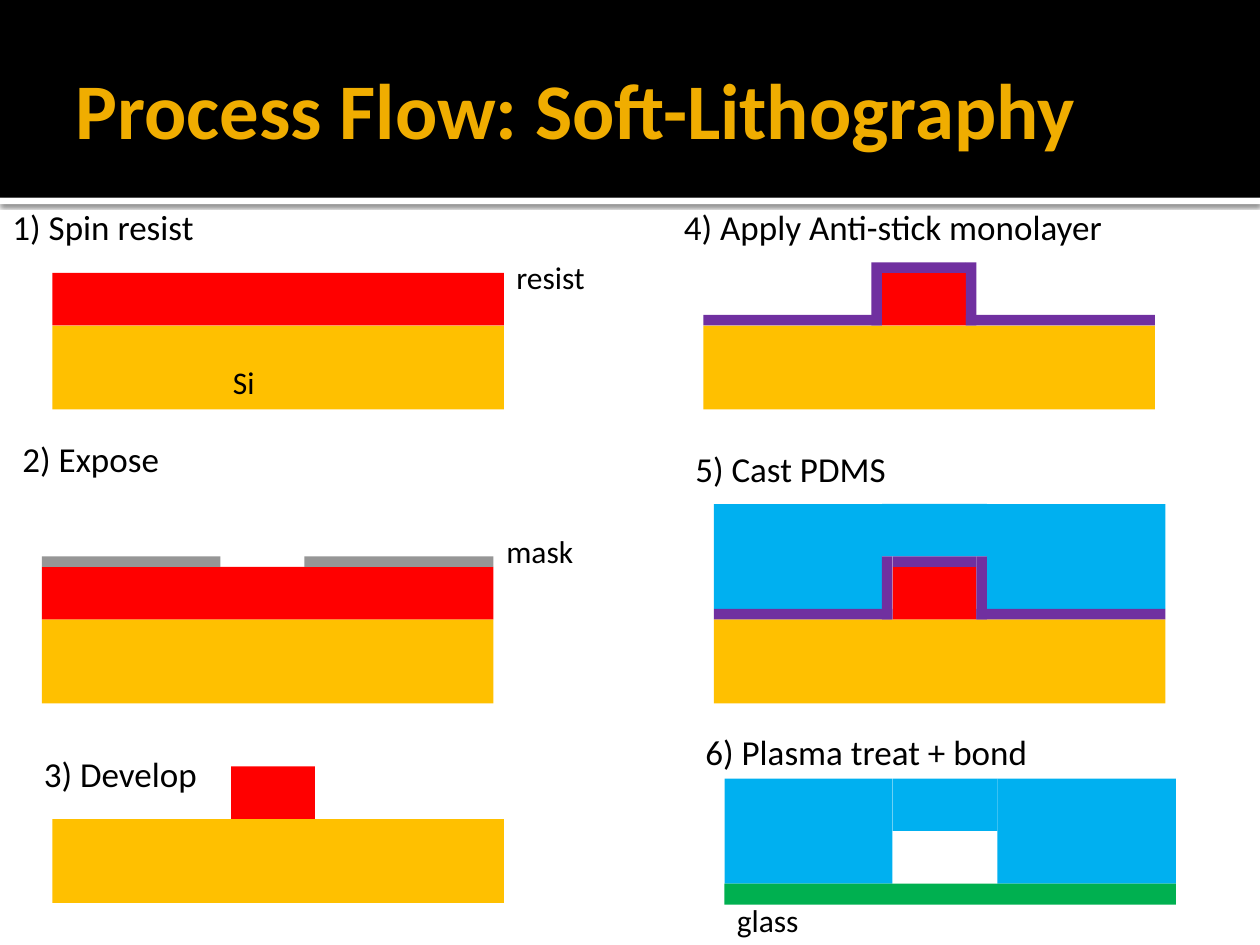
import pptx
import pptx.dml.color
import pptx.enum.shapes
import pptx.enum.text
import pptx.util
import lxml.etree
from pptx.util import Inches

THEME = {
    "font": "Calibri",
    "title_size": 45, "step_size": 20, "material_size": 18,
    "title": "F0AD00", "text": "000000", "band": "000000", "rule": "FFFFFF",
    "silicon": "FFC000", "resist": "FF0000", "mask": "969696",
    "monolayer": "7030A0", "pdms": "00B0F0", "glass": "00B050",
}
GRID = 1 / 12

presentation = pptx.Presentation()
presentation.slide_width = Inches(10)
presentation.slide_height = Inches(7.5)
slide = presentation.slides.add_slide(presentation.slide_layouts[6])


def add_block(color, left, top, width, height, unit=GRID):
    block = slide.shapes.add_shape(
        pptx.enum.shapes.MSO_SHAPE.RECTANGLE,
        *(Inches(length * unit) for length in (left, top, width, height)))
    block.shadow.inherit = False
    block.fill.solid()
    block.fill.fore_color.rgb = pptx.dml.color.RGBColor.from_string(THEME[color])
    block.line.fill.background()
    return block


def add_label(text, left, top, width, height, role, color="text"):
    label = slide.shapes.add_textbox(Inches(left), Inches(top), Inches(width), Inches(height))
    frame = label.text_frame
    frame.word_wrap = True
    paragraph = frame.paragraphs[0]
    paragraph.text = text
    paragraph.font.name = THEME["font"]
    paragraph.font.size = pptx.util.Pt(THEME[role])
    paragraph.font.color.rgb = pptx.dml.color.RGBColor.from_string(THEME[color])
    return frame


rule = add_block("rule", 0, 1.57, 10, 0.05, unit=1)
effects = rule._element.spPr.find(pptx.oxml.ns.qn("a:effectLst"))
shadow = lxml.etree.SubElement(effects, pptx.oxml.ns.qn("a:outerShdw"),
                               blurRad="31750", dist="10160", dir="5400000",
                               algn="tl", rotWithShape="0")
shadow_color = lxml.etree.SubElement(shadow, pptx.oxml.ns.qn("a:srgbClr"), val="000000")
lxml.etree.SubElement(shadow_color, pptx.oxml.ns.qn("a:alpha"), val="60000")
add_block("band", 0, 0, 10, 1.57, unit=1)

title = add_label("Process Flow: Soft-Lithography", 0.5, 0.17, 9, 1.37, "title_size", "title")
title.vertical_anchor = pptx.enum.text.MSO_ANCHOR.MIDDLE
title.margin_right = Inches(0.05)
title.paragraphs[0].font.bold = True

for left, top in ((68, 48), (69, 74.15)):
    add_block("pdms", left, top, 16, 10)
    add_block("pdms", left + 26, top, 17, 10)
    add_block("pdms", left + 16, top, 10, 5)
add_block("glass", 69, 84.15, 43, 2)

for left, top in ((5, 31), (4, 59), (5, 78), (67, 31), (68, 59)):
    add_block("silicon", left, top, 43, 8)

for left, top, width in ((5, 26, 43), (4, 54, 43), (22, 73, 8), (84, 26, 8), (85, 54, 8)):
    add_block("resist", left, top, width, 5)

add_block("mask", 4, 53, 17, 1)
add_block("mask", 29, 53, 18, 1)

for left, top in ((67, 25), (68, 53)):
    add_block("monolayer", left + 17, top, 8, 1)
    add_block("monolayer", left, top + 5, 17, 1)
    add_block("monolayer", left + 25, top + 5, 18, 1)
    add_block("monolayer", left + 16, top, 1, 6)
    add_block("monolayer", left + 25, top, 1, 6)

for step, left, top, width in (
    ("1) Spin resist", 0, 1.58, 1.75),
    ("2) Expose", 0.08, 3.42, 1.75),
    ("3) Develop", 0.25, 5.92, 1.5),
    ("4) Apply Anti-stick monolayer", 5.33, 1.58, 4),
    ("5) Cast PDMS", 5.42, 3.5, 4),
    ("6) Plasma treat + bond", 5.5, 5.75, 2.92),
):
    add_label(step, left, top, width, 0.44, "step_size")

for material, left, top, width in (
    ("Si", 1.75, 2.83, 0.42),
    ("resist", 4, 2, 0.75),
    ("mask", 3.92, 4.17, 0.83),
    ("glass", 5.75, 7.1, 1.17),
):
    add_label(material, left, top, width, 0.4, "material_size")

presentation.save("out.pptx")
